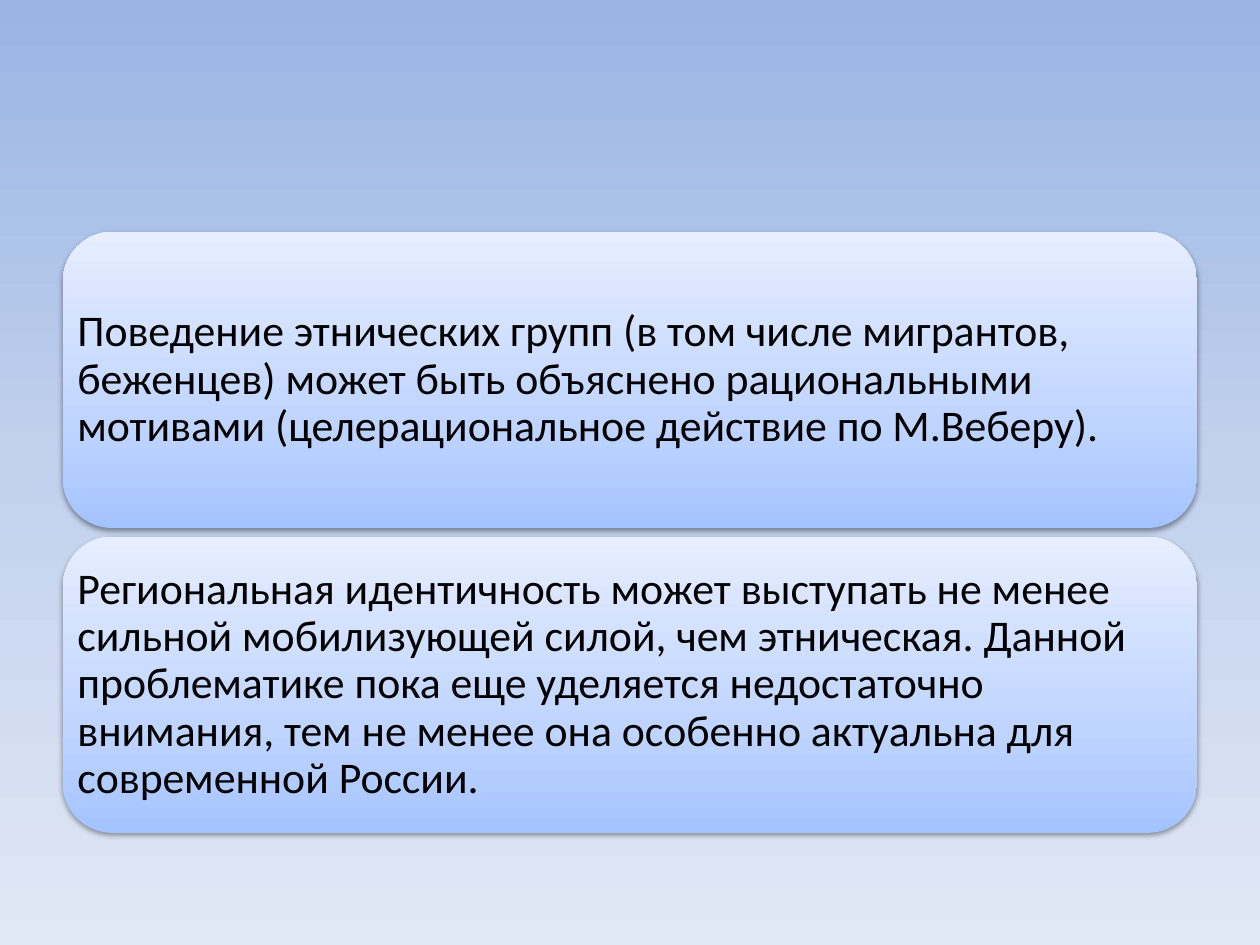
from dataclasses import dataclass

from lxml.etree import SubElement
from pptx import Presentation
from pptx.dml.color import RGBColor
from pptx.enum.shapes import MSO_SHAPE
from pptx.enum.text import MSO_ANCHOR, PP_ALIGN
from pptx.oxml.ns import qn
from pptx.util import Inches, Pt


@dataclass(frozen=True)
class Theme:
    font: str = "Calibri"
    body_size: int = 25
    text: str = "000000"
    shadow: str = "000000"
    # Gradient stops: (position in percent, colour)
    backdrop: tuple = ((0, "9AB5E4"), (50, "C2D1ED"), (100, "E1E8F5"))
    card: tuple = ((0, "A4C4FF"), (35, "BFD4FF"), (100, "E6EEFF"))


THEME = Theme()

STATEMENTS = (
    "Поведение этнических групп (в том числе мигрантов, беженцев) может быть "
    "объяснено рациональными мотивами (целерациональное действие по М.Веберу).",
    "Региональная идентичность может выступать не менее сильной мобилизующей "
    "силой, чем этническая. Данной проблематике пока еще уделяется недостаточно "
    "внимания, тем не менее она особенно актуальна для современной России.",
)


def apply_gradient(fill, owner, stops, angle):
    """Fill with any number of stops; angle runs counter-clockwise."""
    fill.gradient()
    fill.gradient_angle = angle
    stop_list = next(owner.iter(qn("a:gsLst")))
    for default_stop in list(stop_list):
        stop_list.remove(default_stop)
    for position, colour in stops:
        stop = SubElement(stop_list, qn("a:gs"), pos=str(position * 1000))
        SubElement(stop, qn("a:srgbClr"), val=colour)


def add_soft_shadow(card):
    card.shadow.inherit = False
    effects = next(card.element.iter(qn("a:effectLst")))
    shadow = SubElement(
        effects, qn("a:outerShdw"), blurRad=str(Pt(3.1)), dist=str(Pt(1.6)),
        dir="5400000", rotWithShape="0",
    )
    colour = SubElement(shadow, qn("a:srgbClr"), val=THEME.shadow)
    SubElement(colour, qn("a:alpha"), val="38000")


def add_card(slide, statement, left, top, width, height):
    card = slide.shapes.add_shape(
        MSO_SHAPE.ROUNDED_RECTANGLE, left, top, width, height)
    apply_gradient(card.fill, card.element, THEME.card, 90)
    card.line.fill.background()
    add_soft_shadow(card)

    # The rounded corners already inset the text
    frame = card.text_frame
    frame.word_wrap = True
    frame.vertical_anchor = MSO_ANCHOR.MIDDLE
    frame.margin_left = frame.margin_right = 0
    frame.margin_top = frame.margin_bottom = 0

    paragraph = frame.paragraphs[0]
    paragraph.text = statement
    paragraph.alignment = PP_ALIGN.LEFT
    paragraph.line_spacing = 0.9
    paragraph.font.name = THEME.font
    paragraph.font.size = Pt(THEME.body_size)
    paragraph.font.color.rgb = RGBColor.from_string(THEME.text)


def add_card_stack(slide, statements, left, top, width, height, gap):
    """Stack cards of equal height inside the given box."""
    count = len(statements)
    card_height = (height - gap * (count - 1)) // count
    for row, statement in enumerate(statements):
        card_top = top + row * (card_height + gap)
        add_card(slide, statement, left, card_top, width, card_height)


def main():
    presentation = Presentation()
    presentation.slide_width = Inches(10)
    presentation.slide_height = Inches(7.5)
    slide = presentation.slides.add_slide(presentation.slide_layouts[6])

    # Backdrop
    apply_gradient(slide.background.fill, slide.element, THEME.backdrop, 270)

    # Statements
    add_card_stack(slide, STATEMENTS, Inches(0.5), Inches(1.84),
                   Inches(9), Inches(4.77), gap=Inches(0.07))

    presentation.save("out.pptx")


if __name__ == "__main__":
    main()
